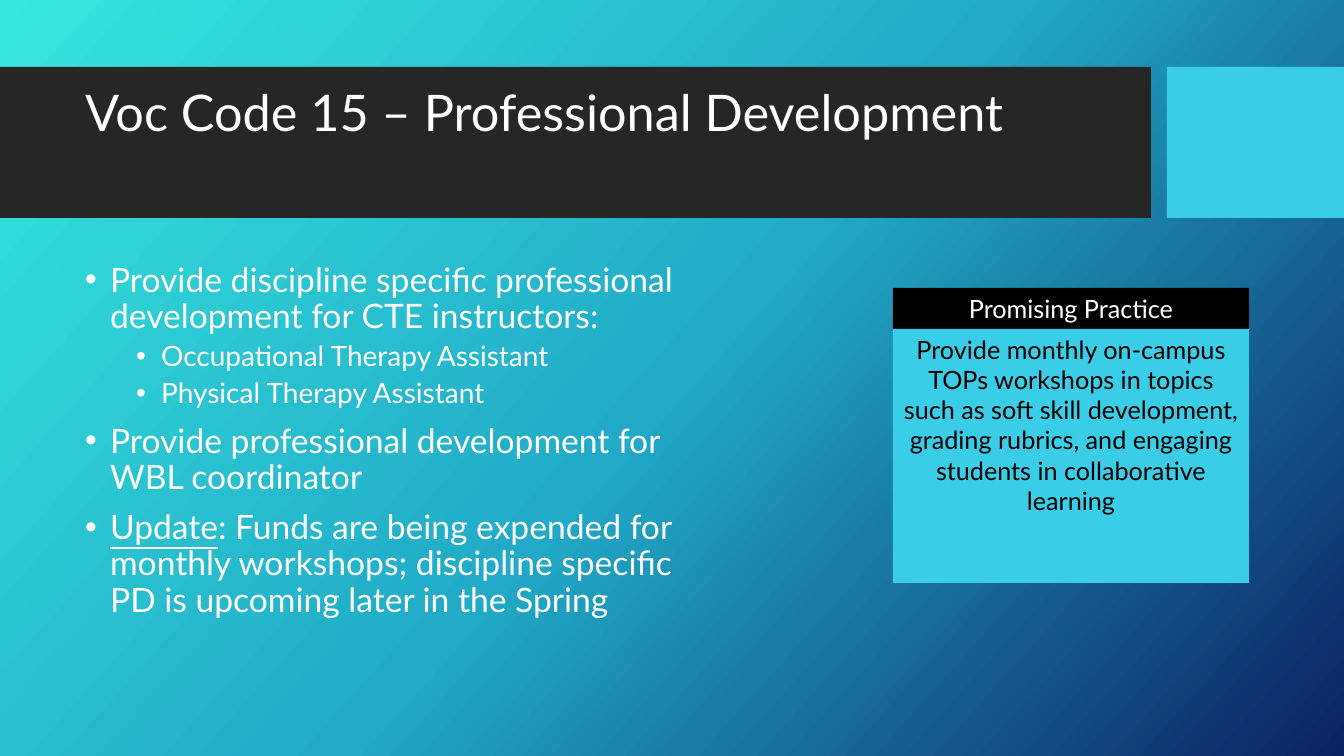
from copy import deepcopy
from lxml.etree import SubElement
from pptx import Presentation
from pptx.dml.color import RGBColor
from pptx.enum.shapes import MSO_SHAPE
from pptx.enum.text import MSO_ANCHOR, MSO_AUTO_SIZE, PP_ALIGN
from pptx.oxml.ns import qn
from pptx.util import Emu, Pt

SCALE = 914400 / 100.8
FONT = "Lato"
WHITE, BLACK, CHARCOAL, CYAN = "FFFFFF", "000000", "262626", "39CDE7"
GRADIENT = [(0, "36E6DD"), (0.5, "21ABC8"), (1, "0C2263")]
GRADIENT_ANGLE = 318

TITLE = "Voc Code 15 – Professional Development"
TITLE_BOX = (75, 83, 1059, 119)
BODY_BOX = (75, 258, 641, 397)
BULLETS = [
    (0, [("Provide discipline specific professional development for CTE instructors:", False)]),
    (1, [("Occupational Therapy Assistant", False)]),
    (1, [("Physical Therapy Assistant", False)]),
    (0, [("Provide professional development for WBL coordinator", False)]),
    (0, [("Update", True),
         (": Funds are being expended for monthly workshops; "
          "discipline specific PD is upcoming later in the Spring", False)]),
]
LEVELS = [{"size": 24, "before": 10, "margin": 25}, {"size": 20, "before": 5, "margin": 76}]
HANGING = 25

BARS = [((0, 67, 1151, 151), CHARCOAL), ((1167, 67, 177, 151), CYAN)]
CARD_LEFT, CARD_TOP, CARD_WIDTH = 893, 288, 356
CARD = [
    ("Promising Practice", 41, BLACK, WHITE, MSO_ANCHOR.MIDDLE),
    ("Provide monthly on-campus TOPs workshops in topics such as soft skill development, "
     "grading rubrics, and engaging students in collaborative learning",
     254, CYAN, BLACK, MSO_ANCHOR.TOP),
]


def px(length):
    """Convert pixels to EMU."""
    return Emu(round(length * SCALE))


def color(value):
    """Turn a hex string into a colour."""
    return RGBColor.from_string(value)


def add_run(paragraph, text, size, text_color, underline=False):
    """Append a formatted run to a paragraph."""
    run = paragraph.add_run()
    run.text = text
    run.font.name = FONT
    run.font.size = Pt(size)
    run.font.color.rgb = color(text_color)
    if underline:
        run.font.underline = True


def add_rectangle(slide, box, fill):
    """Add a plain filled rectangle."""
    shape = slide.shapes.add_shape(MSO_SHAPE.RECTANGLE, *map(px, box))
    shape.shadow.inherit = False
    shape.fill.solid()
    shape.fill.fore_color.rgb = color(fill)
    shape.line.fill.background()
    return shape


def place(placeholder, box):
    """Move a placeholder and return its text frame, anchored at the top."""
    placeholder.left, placeholder.top, placeholder.width, placeholder.height = map(px, box)
    frame = placeholder.text_frame
    frame.word_wrap = True
    frame.auto_size = MSO_AUTO_SIZE.NONE
    frame.vertical_anchor = MSO_ANCHOR.TOP
    return frame


def paint_background(slide):
    """Fill the slide with the diagonal gradient."""
    fill = slide.background.fill
    fill.gradient()
    fill.gradient_angle = GRADIENT_ANGLE
    stop_list = next(slide.element.iter(qn("a:gsLst")))
    stop_list.append(deepcopy(stop_list[0]))
    for stop, (position, value) in zip(fill.gradient_stops, GRADIENT):
        stop.position = position
        stop.color.rgb = color(value)


def add_title(slide):
    """Write the title."""
    paragraph = place(slide.shapes.title, TITLE_BOX).paragraphs[0]
    paragraph.alignment = PP_ALIGN.LEFT
    paragraph.line_spacing = 0.9
    add_run(paragraph, TITLE, 36, WHITE)


def add_bullets(slide):
    """Write the two-level bullet list."""
    frame = place(slide.placeholders[1], BODY_BOX)
    for index, (level, runs) in enumerate(BULLETS):
        style = LEVELS[level]
        paragraph = frame.add_paragraph() if index else frame.paragraphs[0]
        paragraph.level = level
        properties = paragraph._p.get_or_add_pPr()
        properties.set("marL", str(px(style["margin"])))
        properties.set("indent", str(px(-HANGING)))
        SubElement(properties, qn("a:buFont"), typeface="Arial")
        SubElement(properties, qn("a:buChar"), char="•")
        paragraph.line_spacing = 0.9
        paragraph.space_before = Pt(style["before"] if index else 0)
        for text, underline in runs:
            add_run(paragraph, text, style["size"], WHITE, underline)


def add_card(slide):
    """Stack the card's heading and text."""
    top = CARD_TOP
    for text, height, fill, text_color, anchor in CARD:
        shape = add_rectangle(slide, (CARD_LEFT, top, CARD_WIDTH, height), fill)
        frame = shape.text_frame
        frame.word_wrap = True
        frame.vertical_anchor = anchor
        frame.paragraphs[0].alignment = PP_ALIGN.CENTER
        add_run(frame.paragraphs[0], text, 18, text_color)
        top += height


def main():
    """Build and save the slide."""
    presentation = Presentation()
    presentation.slide_width, presentation.slide_height = px(1344), px(756)
    slide = presentation.slides.add_slide(presentation.slide_layouts[1])
    paint_background(slide)
    for box, fill in BARS:
        bar = add_rectangle(slide, box, fill)
        slide.shapes.title.element.addprevious(bar.element)
    add_title(slide)
    add_bullets(slide)
    add_card(slide)
    presentation.save("out.pptx")


if __name__ == "__main__":
    main()
